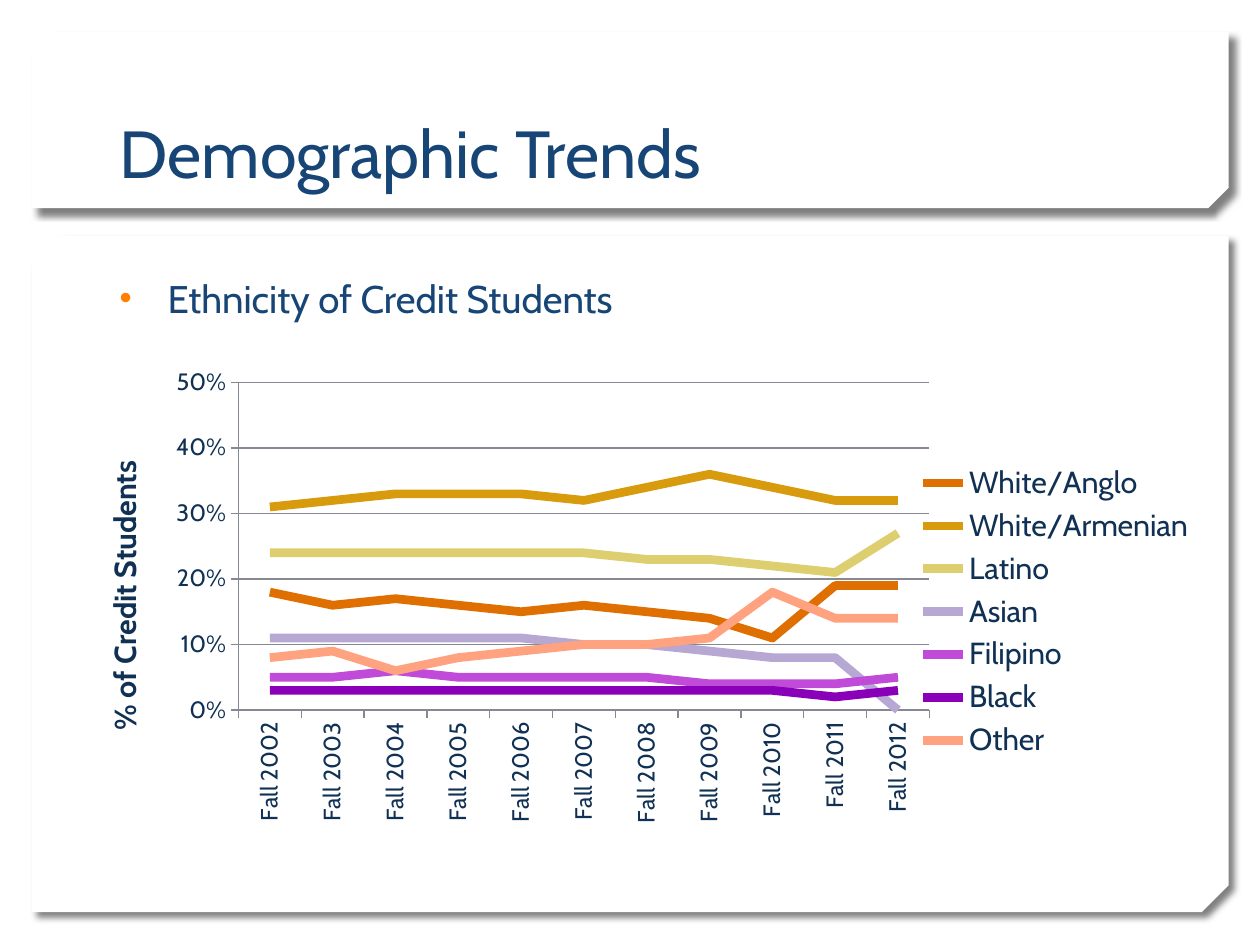
import lxml.etree
import pptx
import pptx.chart.data
import pptx.dml.color
import pptx.enum.chart
import pptx.enum.shapes
import pptx.enum.text
import pptx.oxml
import pptx.oxml.ns
import pptx.util
from pptx.util import Cm, Pt

FONT = "Cabin"
COLORS = {
    "panel": "FFFFFF",
    "text": "174576",
    "chart text": "103154",
    "bullet": "FF7F01",
    "grid": "868993",
}
YEARS = range(2002, 2013)
# Name, line colour and percentage per autumn term
GROUPS = [
    ("White/Anglo", "DE6F00", [18, 16, 17, 16, 15, 16, 15, 14, 11, 19, 19]),
    ("White/Armenian", "D89B0E", [31, 32, 33, 33, 33, 32, 34, 36, 34, 32, 32]),
    ("Latino", "DDCF70", [24, 24, 24, 24, 24, 24, 23, 23, 22, 21, 27]),
    ("Asian", "B6A7D3", [11, 11, 11, 11, 11, 10, 10, 9, 8, 8, 0]),
    ("Filipino", "C04BD8", [5, 5, 6, 5, 5, 5, 5, 4, 4, 4, 5]),
    ("Black", "8900B8", [3, 3, 3, 3, 3, 3, 3, 3, 3, 2, 3]),
    ("Other", "FFA280", [8, 9, 6, 8, 9, 10, 10, 11, 18, 14, 14]),
]


def rgb(name):
    return pptx.dml.color.RGBColor.from_string(COLORS.get(name, name))


def style_font(font, size, color, bold=False):
    font.name = FONT
    font.size = Pt(size)
    font.bold = bold
    font.color.rgb = rgb(color)


deck = pptx.Presentation()
deck.slide_width, deck.slide_height = Cm(25.4), Cm(19.05)
page = deck.slides.add_slide(deck.slide_layouts[5])

# Panels with two snipped corners and a soft shadow, behind the title
for top, height, snip in [(4.75, 13.64, 0.04), (0.64, 3.56, 0.117)]:
    panel = page.shapes.add_shape(
        pptx.enum.shapes.MSO_SHAPE.SNIP_2_DIAG_RECTANGLE,
        Cm(0.64), Cm(top), Cm(24.13), Cm(height))
    panel.adjustments[0] = 0
    panel.adjustments[1] = snip
    panel.fill.solid()
    panel.fill.fore_color.rgb = rgb("panel")
    panel.line.fill.background()
    properties = panel.element.spPr
    properties.find(pptx.oxml.ns.qn("a:xfrm")).set("flipV", "1")
    properties.append(pptx.oxml.parse_xml(
        f'<a:effectLst {pptx.oxml.ns.nsdecls("a")}>'
        f'<a:outerShdw blurRad="{Pt(4)}" dist="{Pt(5)}" dir="2700000" algn="tl" rotWithShape="0">'
        '<a:srgbClr val="000000"><a:alpha val="50000"/></a:srgbClr>'
        '</a:outerShdw></a:effectLst>'))

title = page.shapes.title
title.left, title.top, title.width, title.height = Cm(2.16), Cm(0.81), Cm(21.06), Cm(3.18)
title.text_frame.text = "Demographic Trends"
title.text_frame.auto_size = pptx.enum.text.MSO_AUTO_SIZE.NONE
title.text_frame.vertical_anchor = pptx.enum.text.MSO_ANCHOR.BOTTOM
para = title.text_frame.paragraphs[0]
para.alignment = pptx.enum.text.PP_ALIGN.LEFT
style_font(para.runs[0].font, 38, "text")
page.shapes.element.append(title.element)

box = page.shapes.add_textbox(Cm(2.16), Cm(5.41), Cm(21.06), Cm(11.13))
box.text_frame.word_wrap = True
para = box.text_frame.paragraphs[0]
para.text = "Ethnicity of Credit Students"
para.space_before = Pt(20)
style_font(para.runs[0].font, 22, "text")
bullet = para.runs[0].font.fill  # keeps the run colour apart from the bullet colour
para_properties = para.runs[0].font._element.getparent().getparent().get_or_add_pPr()
para_properties.set("marL", str(Cm(0.97)))
para_properties.set("indent", str(-Cm(0.97)))
for tag, child, attributes in [
    ("a:buClr", "a:srgbClr", {"val": COLORS["bullet"]}),
    ("a:buSzPct", None, {"val": "90000"}),
    ("a:buFont", None, {"typeface": "Arial"}),
    ("a:buChar", None, {"char": "•"}),
]:
    node = lxml.etree.SubElement(para_properties, pptx.oxml.ns.qn(tag))
    if child:
        node = lxml.etree.SubElement(node, pptx.oxml.ns.qn(child))
    for key, value in attributes.items():
        node.set(key, value)

data = pptx.chart.data.CategoryChartData(number_format="0%")
data.categories = [f"Fall {year}" for year in YEARS]
for name, color, percents in GROUPS:
    data.add_series(name, [percent / 100 for percent in percents])
chart = page.shapes.add_chart(
    pptx.enum.chart.XL_CHART_TYPE.LINE,
    Cm(1.22), Cm(7.21), Cm(23.14), Cm(10.24), data).chart
style_font(chart.font, 17.4, "chart text")
chart.has_title = False
chart.has_legend = True
chart.legend.position = pptx.enum.chart.XL_LEGEND_POSITION.RIGHT
chart.legend.include_in_layout = False
style_font(chart.legend.font, 17.4, "chart text")
chart.plots[0].vary_by_categories = False
for series, (name, color, percents) in zip(chart.plots[0].series, GROUPS):
    series.smooth = False
    series.marker.style = pptx.enum.chart.XL_MARKER_STYLE.NONE
    series.format.line.width = Pt(5)
    series.format.line.color.rgb = rgb(color)

for axis in (chart.category_axis, chart.value_axis):
    axis.major_tick_mark = pptx.enum.chart.XL_TICK_MARK.OUTSIDE
    axis.minor_tick_mark = pptx.enum.chart.XL_TICK_MARK.NONE
    axis.format.line.width = Pt(0.75)
    axis.format.line.color.rgb = rgb("grid")
    style_font(axis.tick_labels.font, 13.5, "chart text")
label_body = chart.category_axis._element.find(
    f'{pptx.oxml.ns.qn("c:txPr")}/{pptx.oxml.ns.qn("a:bodyPr")}')
label_body.set("rot", "-5400000")
label_body.set("vert", "horz")

values = chart.value_axis
values.minimum_scale, values.maximum_scale, values.major_unit = 0, 0.5, 0.1
values.tick_labels.number_format = "0%"
values.tick_labels.number_format_is_linked = False
values.has_major_gridlines = True
values.major_gridlines.format.line.width = Pt(0.75)
values.major_gridlines.format.line.color.rgb = rgb("grid")
values.axis_title.text_frame.text = "% of Credit Students"
style_font(values.axis_title.text_frame.paragraphs[0].runs[0].font, 17.4, "chart text", bold=True)

# Fixed inner plot area, as shares of the chart frame
plot_area = chart.plots[0]._element.getparent()
for old_layout in plot_area.findall(pptx.oxml.ns.qn("c:layout")):
    plot_area.remove(old_layout)
layout = lxml.etree.Element(pptx.oxml.ns.qn("c:layout"))
manual = lxml.etree.SubElement(layout, pptx.oxml.ns.qn("c:manualLayout"))
for tag, value in [("layoutTarget", "inner"), ("xMode", "edge"), ("yMode", "edge"),
                   ("x", "0.155"), ("y", "0.049"), ("w", "0.602"), ("h", "0.645")]:
    lxml.etree.SubElement(manual, pptx.oxml.ns.qn(f"c:{tag}")).set("val", value)
plot_area.insert(0, layout)

deck.save("out.pptx")
